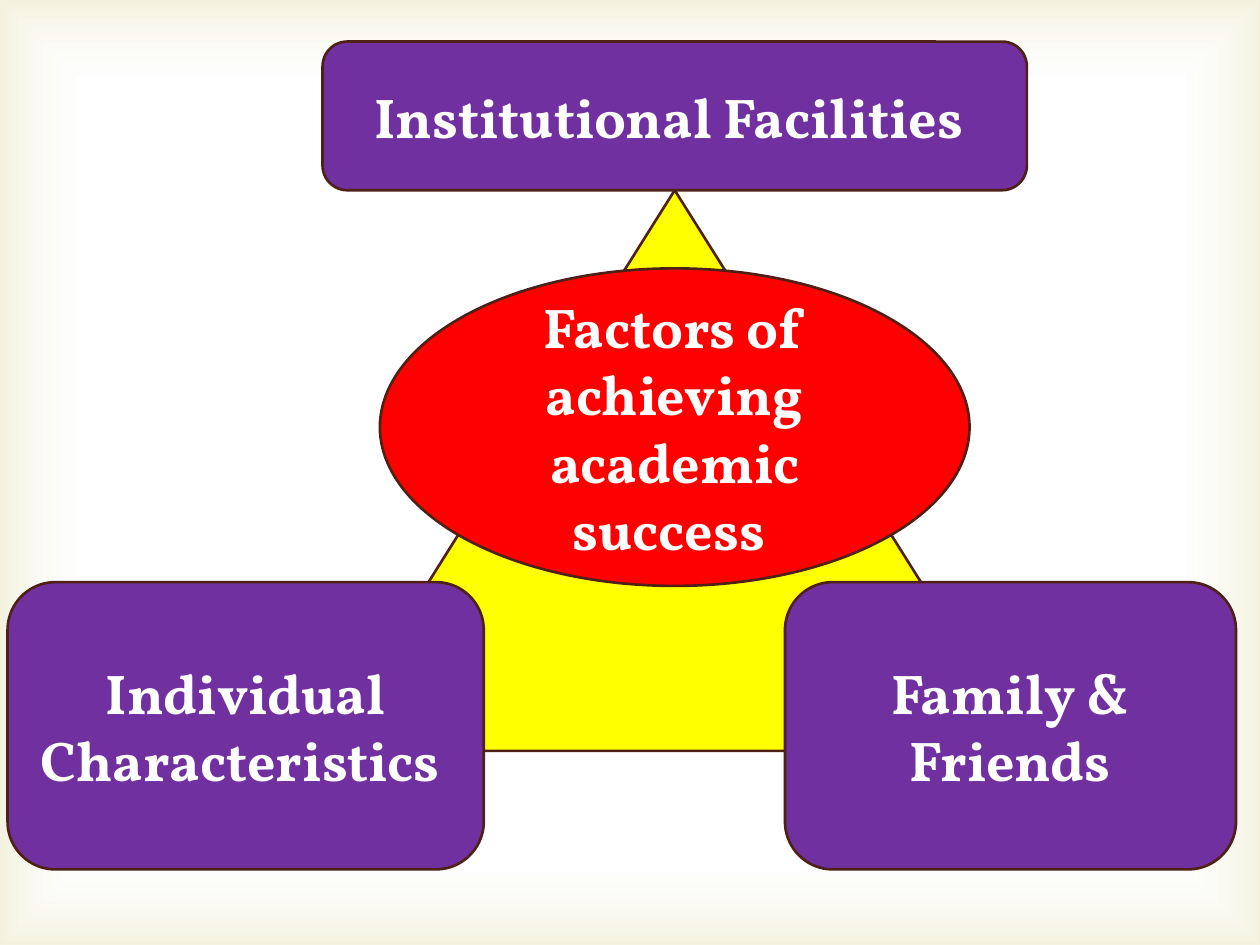
from lxml.etree import SubElement
from pptx import Presentation
from pptx.dml.color import RGBColor
from pptx.enum.shapes import MSO_SHAPE
from pptx.enum.text import MSO_ANCHOR, PP_ALIGN
from pptx.oxml import parse_xml
from pptx.oxml.ns import nsdecls, qn
from pptx.util import Inches, Pt

PURPLE, YELLOW, RED = "7030A0", "FFFF00", "FF0000"
WHITE, BROWN, OLIVE = "FFFFFF", "4F2015", "D1CA75"


def color(value):
    return RGBColor.from_string(value)


class FactorsPage:
    """Draws on one slide; positions and sizes are percentages of the slide."""

    font_name = "Vollkorn"
    font_size = Pt(32)
    line_width = Pt(1.5)

    def __init__(self, deck):
        self.width, self.height = deck.slide_width, deck.slide_height
        self.page = deck.slides.add_slide(deck.slide_layouts[6])

    def shape(self, kind, left, top, width, height):
        box = self.page.shapes.add_shape(
            kind,
            round(self.width * left / 100), round(self.height * top / 100),
            round(self.width * width / 100), round(self.height * height / 100))
        box.shadow.inherit = False
        return box

    def glow(self, stops):
        """Cover the slide with a gradient of (position, color, opacity) stops in percent."""
        box = self.shape(MSO_SHAPE.RECTANGLE, 0, 0, 100, 100)
        box.line.fill.background()
        gradient = parse_xml(f'<a:gradFill {nsdecls("a")} rotWithShape="1"/>')
        stop_list = SubElement(gradient, qn("a:gsLst"))
        for position, value, opacity in stops:
            stop = SubElement(stop_list, qn("a:gs"), pos=str(position * 1000))
            tint = SubElement(stop, qn("a:srgbClr"), val=value)
            SubElement(tint, qn("a:alpha"), val=str(opacity * 1000))
        center = SubElement(gradient, qn("a:path"), {"path": "rect"})
        SubElement(center, qn("a:fillToRect"),
                   {side: "50000" for side in "ltrb"})
        box.element.spPr.find(qn("a:prstGeom")).addnext(gradient)

    def block(self, kind, fill, left, top, width, height, text=""):
        box = self.shape(kind, left, top, width, height)
        box.fill.solid()
        box.fill.fore_color.rgb = color(fill)
        box.line.color.rgb = color(BROWN)
        box.line.width = self.line_width
        if text:
            self.label(box, text)

    def label(self, box, text):
        frame = box.text_frame
        frame.word_wrap = True
        frame.vertical_anchor = MSO_ANCHOR.MIDDLE
        para = frame.paragraphs[0]
        para.text = text
        para.alignment = PP_ALIGN.CENTER
        para.font.name = self.font_name
        para.font.size = self.font_size
        para.font.bold = True
        para.font.color.rgb = color(WHITE)


def main():
    deck = Presentation()
    deck.slide_width, deck.slide_height = Inches(10), Inches(7.5)
    page = FactorsPage(deck)
    page.glow([(83, WHITE, 11), (100, OLIVE, 23)])

    left, width = 25.6, 55.9
    header_top, header_height = 4.4, 15.73
    page.block(MSO_SHAPE.ISOSCELES_TRIANGLE, YELLOW,
               left, header_top + header_height, width, 59.33)

    corner_top, corner_height = 61.6, 30.4
    for text, *place in (
        ("Institutional Facilities ", left, header_top, width, header_height),
        ("Individual Characteristics ", 0.6, corner_top, 37.8, corner_height),
        ("Family & Friends", 62.3, corner_top, 35.8, corner_height),
    ):
        page.block(MSO_SHAPE.ROUNDED_RECTANGLE, PURPLE, *place, text)

    oval_width = 46.8
    page.block(MSO_SHAPE.OVAL, RED, left + (width - oval_width) / 2, 28.4,
               oval_width, 33.6, "Factors of achieving academic success ")

    deck.save("out.pptx")


if __name__ == "__main__":
    main()
